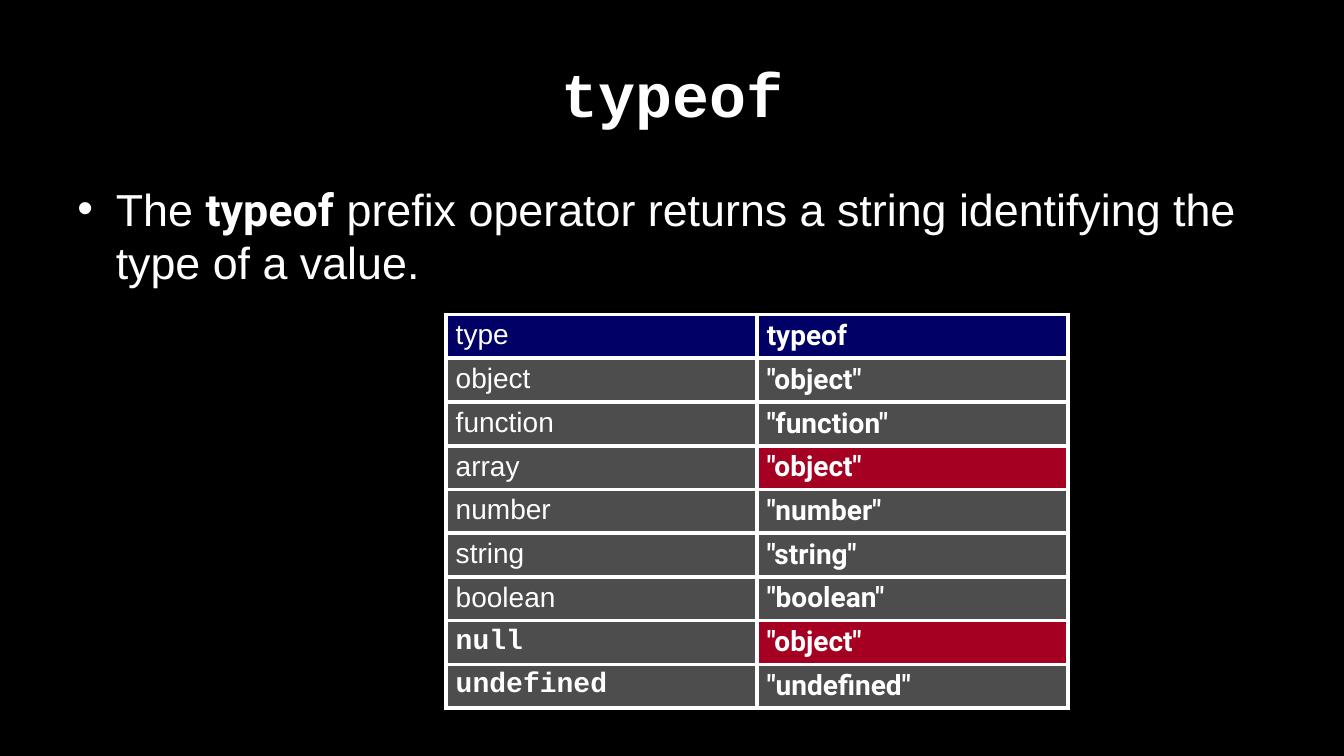
from dataclasses import dataclass

from lxml.etree import SubElement
from pptx import Presentation
from pptx.dml.color import RGBColor
from pptx.enum.text import MSO_ANCHOR, PP_ALIGN
from pptx.oxml.ns import qn
from pptx.util import Inches, Pt

BLACK = RGBColor(0x00, 0x00, 0x00)
WHITE = RGBColor(0xFF, 0xFF, 0xFF)
NAVY = RGBColor(0x00, 0x00, 0x66)
GRAY = RGBColor(0x4D, 0x4D, 0x4D)
RED = RGBColor(0xA5, 0x00, 0x21)

PLAIN = {"name": "Arial", "bold": False}
STRONG = {"name": "Roboto", "bold": True}
CODE = {"name": "Courier New", "bold": True}


@dataclass
class TypeRow:
    kind: str
    result: str
    kind_format: dict
    kind_fill: RGBColor = GRAY
    result_fill: RGBColor = GRAY


TYPE_ROWS = [
    TypeRow("type", "typeof", PLAIN, NAVY, NAVY),
    TypeRow("object", '"object"', PLAIN),
    TypeRow("function", '"function"', PLAIN),
    TypeRow("array", '"object"', PLAIN, result_fill=RED),
    TypeRow("number", '"number"', PLAIN),
    TypeRow("string", '"string"', PLAIN),
    TypeRow("boolean", '"boolean"', PLAIN),
    TypeRow("null", '"object"', CODE, result_fill=RED),
    TypeRow("undefined", '"undefined"', CODE),
]


def add_span(para, text: str, size: float, font_format: dict) -> None:
    span = para.add_run()
    span.text = text
    for name, value in {"size": Pt(size), **font_format}.items():
        setattr(span.font, name, value)
    span.font.color.rgb = WHITE


def set_spacing(para, **percents: int) -> None:
    properties = para._p.get_or_add_pPr()
    for tag, percent in percents.items():
        spacing = SubElement(properties, qn(f"a:{tag}"))
        SubElement(spacing, qn("a:spcPct"), val=str(percent * 1000))


def add_box(page, top: float, height: float, anchor: MSO_ANCHOR):
    box = page.shapes.add_textbox(Inches(0.67), Inches(top), Inches(12), Inches(height))
    frame = box.text_frame
    for name, value in {"word_wrap": True, "vertical_anchor": anchor}.items():
        setattr(frame, name, value)
    return frame.paragraphs[0]


def add_title(page) -> None:
    para = add_box(page, 0.3, 1.25, MSO_ANCHOR.MIDDLE)
    para.alignment = PP_ALIGN.CENTER
    add_span(para, "typeof", 44, CODE)


def add_body(page) -> None:
    para = add_box(page, 1.75, 5.5, MSO_ANCHOR.TOP)
    set_spacing(para, spcBef=20)
    properties = para._p.get_or_add_pPr()
    properties.set("marL", str(Inches(0.38)))
    properties.set("indent", str(Inches(-0.38)))
    SubElement(properties, qn("a:buFont"), typeface="Arial")
    SubElement(properties, qn("a:buChar"), char="•")
    add_span(para, "The ", 32, PLAIN)
    add_span(para, "typeof", 32, STRONG)
    add_span(para, " prefix operator returns a string identifying the type of a value.", 32, PLAIN)


def fill_cell(cell, text: str, font_format: dict, color: RGBColor) -> None:
    para = cell.text_frame.paragraphs[0]
    set_spacing(para, spcBef=30, spcAft=20)
    add_span(para, text, 20, font_format)
    properties = cell._tc.get_or_add_tcPr()
    for side in ("lnL", "lnR", "lnT", "lnB"):
        line = SubElement(properties, qn(f"a:{side}"), w=str(Pt(3)))
        fill = SubElement(line, qn("a:solidFill"))
        SubElement(fill, qn("a:srgbClr"), val=str(WHITE))
    cell.fill.solid()
    cell.fill.fore_color.rgb = color


def add_type_table(page) -> None:
    frame = page.shapes.add_table(
        len(TYPE_ROWS), 2, Inches(4.42), Inches(3.12), Inches(6.17), Inches(0.42 * len(TYPE_ROWS))
    )
    table = frame.table
    for name, value in {"first_row": False, "horz_banding": False}.items():
        setattr(table, name, value)
    for index, row in enumerate(TYPE_ROWS):
        fill_cell(table.cell(index, 0), row.kind, row.kind_format, row.kind_fill)
        fill_cell(table.cell(index, 1), row.result, STRONG, row.result_fill)


def main() -> None:
    deck = Presentation()
    deck.slide_width = Inches(13.33)
    deck.slide_height = Inches(7.5)
    page = deck.slides.add_slide(deck.slide_layouts[6])
    page.background.fill.solid()
    page.background.fill.fore_color.rgb = BLACK
    add_title(page)
    add_body(page)
    add_type_table(page)
    deck.save("out.pptx")


if __name__ == "__main__":
    main()
